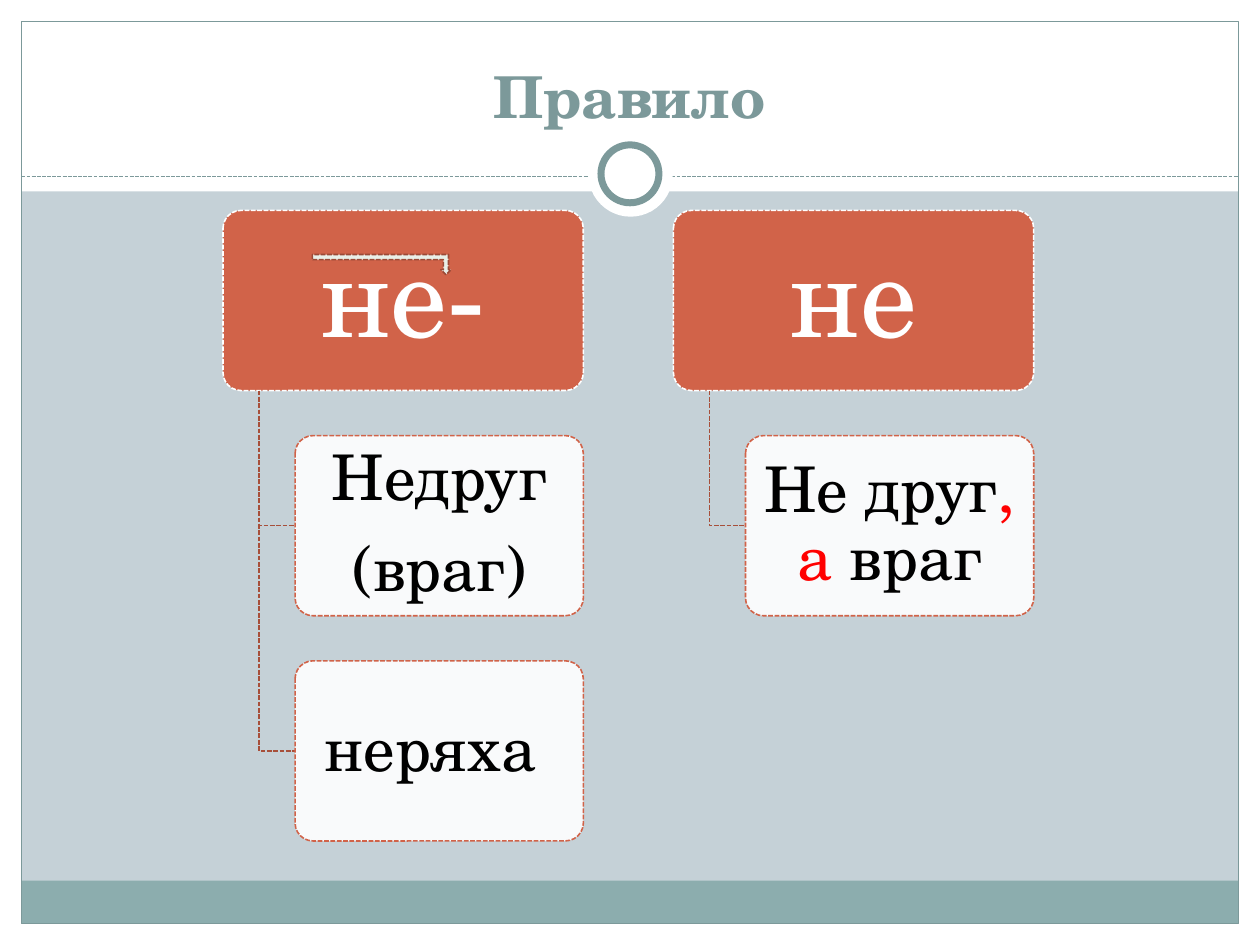
from dataclasses import dataclass
from lxml.etree import SubElement
from pptx import Presentation
from pptx.dml.color import RGBColor
from pptx.enum.dml import MSO_LINE_DASH_STYLE as Dash
from pptx.enum.shapes import MSO_CONNECTOR as Connector, MSO_SHAPE as Preset
from pptx.enum.text import MSO_ANCHOR as Anchor, MSO_AUTO_SIZE as AutoSize, PP_ALIGN as Align
from pptx.oxml.ns import qn
from pptx.util import Inches, Pt


@dataclass(frozen=True)
class Theme:
    font: str = "TeX Gyre Schola"
    page: str = "C5D1D7"
    white: str = "FFFFFF"
    black: str = "000000"
    red: str = "FF0000"
    teal: str = "7C999A"
    footer: str = "8CADAE"
    accent: str = "D16349"
    branch: str = "A74F3A"
    mark: str = "E9EFE8"
    mark_edge: str = "9B4936"
    title_size: int = 33
    heading_size: int = 65
    example_size: int = 36
    hairline: float = 0.75
    diagram_line: float = 0.9
    ring_line: float = 4


THEME = Theme()
HEADING_INSETS = (0.14, 0.09)
EXAMPLE_INSETS = (0.07, 0.05)


def apply_format(target, values):
    for name, value in values.items():
        setattr(target, name, value)


def style_line(line, color, width, dash=None):
    line.fill.solid()
    line.fill.fore_color.rgb = RGBColor.from_string(color)
    apply_format(line, {"width": Pt(width), "dash_style": dash})


def style_shape(shape, fill=None, edge=None, width=THEME.hairline, dash=None):
    shape.shadow.inherit = False
    if fill:
        shape.fill.solid()
        shape.fill.fore_color.rgb = RGBColor.from_string(fill)
    else:
        shape.fill.background()
    if edge:
        style_line(shape.line, edge, width, dash)
    else:
        shape.line.fill.background()


def add_preset(slide, preset, box, **style):
    shape = slide.shapes.add_shape(preset, *map(Inches, box))
    style_shape(shape, **style)
    return shape


def write_run(paragraph, text, color, size, bold=False):
    run = paragraph.add_run()
    run.text = text
    apply_format(run.font, {"name": THEME.font, "size": Pt(size), "bold": bold})
    run.font.color.rgb = RGBColor.from_string(color)


def draw_frame(slide, box):
    left, top, width, height = box
    edge = 0.17
    inner_width, bottom = width - 2 * edge, height - edge
    bands = [
        ((left, bottom, width, edge), THEME.white),
        ((left, top, width, 1.52), THEME.white),
        ((left, top, edge, height), THEME.white),
        ((width - edge, top, edge, height), THEME.white),
        ((edge, bottom - 0.34, inner_width, 0.34), THEME.footer),
    ]
    for band, color in bands:
        add_preset(slide, Preset.RECTANGLE, band, fill=color)
    add_preset(slide, Preset.RECTANGLE, (edge, edge, inner_width, height - 2 * edge), edge=THEME.teal)

    divider = slide.shapes.add_connector(
        Connector.STRAIGHT, *map(Inches, (edge, 1.4, width - edge, 1.4)))
    style_line(divider.line, THEME.teal, THEME.hairline, Dash.SQUARE_DOT)
    SubElement(divider._element.spPr, qn("a:effectLst"))

    add_preset(slide, Preset.OVAL, (4.67, 1.05, 0.67, 0.67), fill=THEME.white)
    add_preset(slide, Preset.OVAL, (4.77, 1.15, 0.46, 0.46),
               fill=THEME.white, edge=THEME.teal, width=THEME.ring_line)


def place_title(slide, box, text):
    title = slide.shapes.title
    slide.shapes._spTree.append(title._element)
    apply_format(title, dict(zip(("left", "top", "width", "height"), map(Inches, box))))
    apply_format(title.text_frame, {
        "vertical_anchor": Anchor.BOTTOM, "word_wrap": True, "auto_size": AutoSize.NONE})
    paragraph = title.text_frame.paragraphs[0]
    paragraph.alignment = Align.CENTER
    write_run(paragraph, text, THEME.teal, THEME.title_size, bold=True)


def draw_card(slide, box, lines, fill, edge, size, insets):
    card = add_preset(slide, Preset.ROUNDED_RECTANGLE, box, fill=fill, edge=edge,
                      width=THEME.diagram_line, dash=Dash.SQUARE_DOT)
    card.adjustments[0] = 0.1
    side, end = map(Inches, insets)
    frame = card.text_frame
    apply_format(frame, {
        "margin_left": side, "margin_right": side, "margin_top": end, "margin_bottom": end,
        "vertical_anchor": Anchor.MIDDLE, "word_wrap": True})
    for index, runs in enumerate(lines):
        paragraph = frame.add_paragraph() if index else frame.paragraphs[0]
        apply_format(paragraph, {
            "alignment": Align.CENTER, "line_spacing": 0.9, "space_after": Pt(size * 0.35)})
        for text, color in runs:
            write_run(paragraph, text, color, size)
    return card


def draw_branch(slide, trunk, top, end, middle):
    builder = slide.shapes.build_freeform(Inches(trunk), Inches(top))
    builder.add_line_segments(
        [(Inches(trunk), Inches(middle)), (Inches(end), Inches(middle))], close=False)
    style_shape(builder.convert_to_shape(), edge=THEME.branch,
                width=THEME.diagram_line, dash=Dash.SQUARE_DOT)


def draw_rule_column(slide, box, heading, examples):
    left, top, width, height = box
    draw_card(slide, box, [[(heading, THEME.white)]], THEME.accent, THEME.white,
              THEME.heading_size, HEADING_INSETS)
    indent, pitch = width * 0.2, height * 1.25
    for row, lines in enumerate(examples, start=1):
        example_top = top + row * pitch
        draw_branch(slide, left + indent / 2, top + height, left + indent, example_top + height / 2)
        card = draw_card(slide, (left + indent, example_top, width - indent, height), lines,
                         THEME.white, THEME.accent, THEME.example_size, EXAMPLE_INSETS)
        color = card.fill._xPr.find(qn("a:solidFill"))[0]
        SubElement(color, qn("a:alpha"), val="90000")


def draw_prefix_mark(slide, box):
    mark = add_preset(slide, Preset.BENT_UP_ARROW, box, fill=THEME.mark, edge=THEME.mark_edge,
                      width=THEME.diagram_line, dash=Dash.SQUARE_DOT)
    mark.rotation = 180
    mark._element.spPr.xfrm.set("flipH", "1")


def main():
    deck = Presentation()
    apply_format(deck, {"slide_width": Inches(10), "slide_height": Inches(7.5)})
    slide = deck.slides.add_slide(deck.slide_layouts[5])
    slide.background.fill.solid()
    slide.background.fill.fore_color.rgb = RGBColor.from_string(THEME.page)

    draw_frame(slide, (0, 0, 10, 7.5))
    place_title(slide, (0.33, 0.25, 9.33, 0.83), "Правило")

    black, red = THEME.black, THEME.red
    rules = [
        ("не-", [[[("Недруг", black)], [("(враг)", black)]], [[("неряха ", black)]]]),
        ("не", [[[("Не друг", black), (", а", red), (" враг", black)]]]),
    ]
    card_width, card_height = 2.86, 1.43
    for column, (heading, examples) in enumerate(rules):
        left = 1.77 + column * card_width * 1.25
        draw_rule_column(slide, (left, 1.67, card_width, card_height), heading, examples)
    draw_prefix_mark(slide, (2.48, 2.02, 1.1, 0.16))

    deck.save("out.pptx")


if __name__ == "__main__":
    main()
